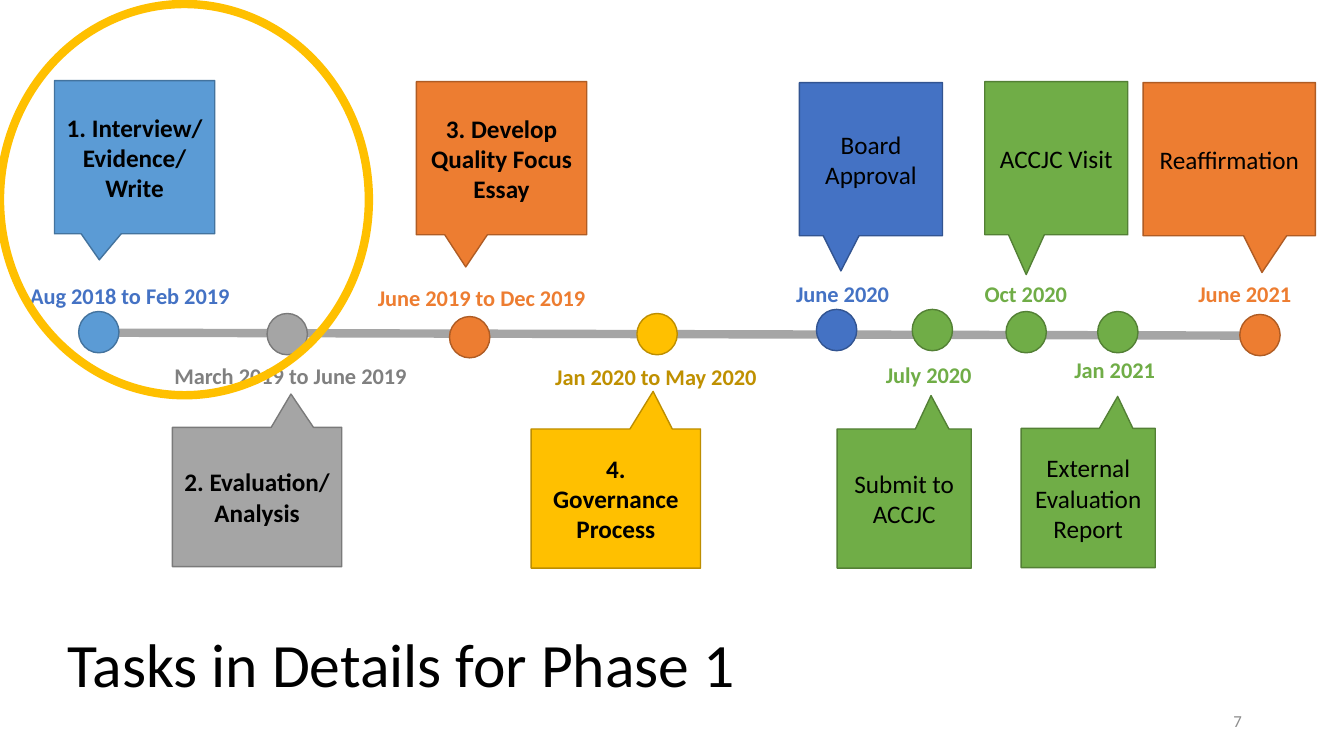
from collections import namedtuple

from lxml import etree
from pptx import Presentation
from pptx import util as u
from pptx.dml import color
from pptx.enum import shapes, text
from pptx.oxml import ns

SHAPE = shapes.MSO_SHAPE
ALIGN = text.PP_ALIGN
ANCHOR = text.MSO_ANCHOR

BORDERS = {
    "5B9BD5": "43739E",
    "ED7D31": "AF5C24",
    "A5A5A5": "7A7A7A",
    "FFC000": "BD8E00",
    "4472C4": "325491",
    "70AD47": "538035",
}
UPPER_HEIGHT, LOWER_HEIGHT = 109.4, 99.4

Milestone = namedtuple(
    "Milestone", "task bold hue corner width pointer dot date date_hue date_box"
)
MILESTONES = [
    Milestone("1. Interview/\nEvidence/\nWrite", True, "5B9BD5", (38.9, 57.6), 114.5,
              (-0.22, 0.67), (56.2, 222.5),
              "Aug 2018 to Feb 2019", "4472C4", (14.4, 198, 157.7)),
    Milestone("2. Evaluation/\nAnalysis", True, "A5A5A5", (123.1, 305.3), 121,
              (0.2, -0.74), (190.8, 223.9),
              "March 2019 to June 2019", "808080", (117.4, 254.9, 182.9)),
    Milestone("3. Develop Quality Focus Essay", True, "ED7D31", (297.4, 58.3), 121.7,
              (-0.21, 0.71), (321.1, 226.1),
              "June 2019 to Dec 2019", "ED7D31", (262.8, 199.4, 163.4)),
    Milestone("4. Governance Process", True, "FFC000", (379.4, 306.4), 121,
              (0.22, -0.77), (455, 223.9),
              "Jan 2020 to May 2020", "BF9000", (389.5, 255.6, 160.6)),
    Milestone("Board Approval", False, "4472C4", (571, 59), 102.2,
              (-0.21, 0.73), (583.2, 221),
              "June 2020", "4472C4", (561.6, 196.6, 81.4)),
    Milestone("Submit to ACCJC", False, "70AD47", (598, 306.4), 95.8,
              (0.2, -0.74), (651.6, 221),
              "July 2020", "70AD47", (625.7, 254.2, 76.3)),
    Milestone("ACCJC Visit", False, "70AD47", (703.4, 58.3), 102.2,
              (-0.21, 0.76), (718.6, 222.5),
              "Oct 2020", "70AD47", (696.2, 196.6, 74.2)),
    Milestone("External Evaluation Report", False, "70AD47", (729.4, 306), 95.8,
              (0.22, -0.73), (784.1, 222.5),
              "Jan 2021", "70AD47", (760.3, 250.6, 72)),
    Milestone("Reaffirmation", False, "ED7D31", (816.5, 59), 123.1,
              (0.19, 0.74), (885.6, 224.6),
              "June 2021", "ED7D31", (848.9, 196.6, 81.4)),
]


def paint(target, hue):
    target.rgb = color.RGBColor.from_string(hue)


class TimelineSlide:
    font_name = "Calibri"

    def __init__(self, slide):
        self.slide = slide

    def set_text(self, frame, words, size, hue, align, anchor, bold=False):
        frame.text = words
        frame.vertical_anchor = anchor
        for paragraph in frame.paragraphs:
            paragraph.alignment = align
            paragraph.font.name = self.font_name
            paragraph.font.size = u.Pt(size)
            paragraph.font.bold = bold
            paint(paragraph.font.color, hue)

    def title(self, words, box):
        heading = self.slide.shapes.title
        heading.left, heading.top, heading.width, heading.height = map(u.Pt, box)
        self.set_text(heading.text_frame, words, 44, "000000", ALIGN.LEFT, ANCHOR.TOP)
        heading.text_frame.auto_size = text.MSO_AUTO_SIZE.NONE
        heading.text_frame.paragraphs[0].line_spacing = 0.9

    def axis(self, start, end, hue, weight):
        line = self.slide.shapes.add_connector(
            shapes.MSO_CONNECTOR.STRAIGHT, *map(u.Pt, start + end)
        )
        paint(line.line.color, hue)
        line.line.width = u.Pt(weight)
        etree.SubElement(line._element.spPr, ns.qn("a:effectLst"))

    def shape(self, kind, box, fill, border, weight=1):
        drawn = self.slide.shapes.add_shape(kind, *map(u.Pt, box))
        drawn.shadow.inherit = False
        if fill:
            drawn.fill.solid()
            paint(drawn.fill.fore_color, fill)
        else:
            drawn.fill.background()
        paint(drawn.line.color, border)
        drawn.line.width = u.Pt(weight)
        return drawn

    def callout(self, step):
        height = UPPER_HEIGHT if step.pointer[1] > 0 else LOWER_HEIGHT
        box = (*step.corner, step.width, height)
        bubble = self.shape(
            SHAPE.RECTANGULAR_CALLOUT, box, step.hue, BORDERS[step.hue]
        )
        bubble.adjustments[0], bubble.adjustments[1] = step.pointer
        self.set_text(bubble.text_frame, step.task, 18, "000000",
                      ALIGN.CENTER, ANCHOR.MIDDLE, step.bold)

    def dot(self, step):
        self.shape(SHAPE.FLOWCHART_CONNECTOR, (*step.dot, 28.8, 29.5),
                   step.hue, BORDERS[step.hue])

    def label(self, words, box, size, hue, align=ALIGN.LEFT,
              anchor=ANCHOR.TOP, bold=False, wrap=False):
        frame = self.slide.shapes.add_textbox(*map(u.Pt, box)).text_frame
        frame.word_wrap = wrap
        self.set_text(frame, words, size, hue, align, anchor, bold)


def main():
    deck = Presentation()
    deck.slide_width, deck.slide_height = u.Pt(960), u.Pt(540)
    timeline = TimelineSlide(deck.slides.add_slide(deck.slide_layouts[5]))
    timeline.title("Tasks in Details for Phase 1", (41, 449.3, 828, 51))
    timeline.axis((56.2, 237.6), (914.4, 239.8), "A5A5A5", 6)
    for step in MILESTONES:
        timeline.callout(step)
    for step in MILESTONES:
        timeline.dot(step)
        timeline.label(step.date, (*step.date_box, 26.6), 16, step.date_hue, bold=True)
    timeline.label("7", (678.2, 500.4, 216, 28.8), 12, "8C8C8C",
                   ALIGN.RIGHT, ANCHOR.MIDDLE, wrap=True)
    timeline.shape(SHAPE.OVAL, (0, 2.9, 263.5, 279.4), None, "FFC000", 6)
    deck.save("out.pptx")


if __name__ == "__main__":
    main()
